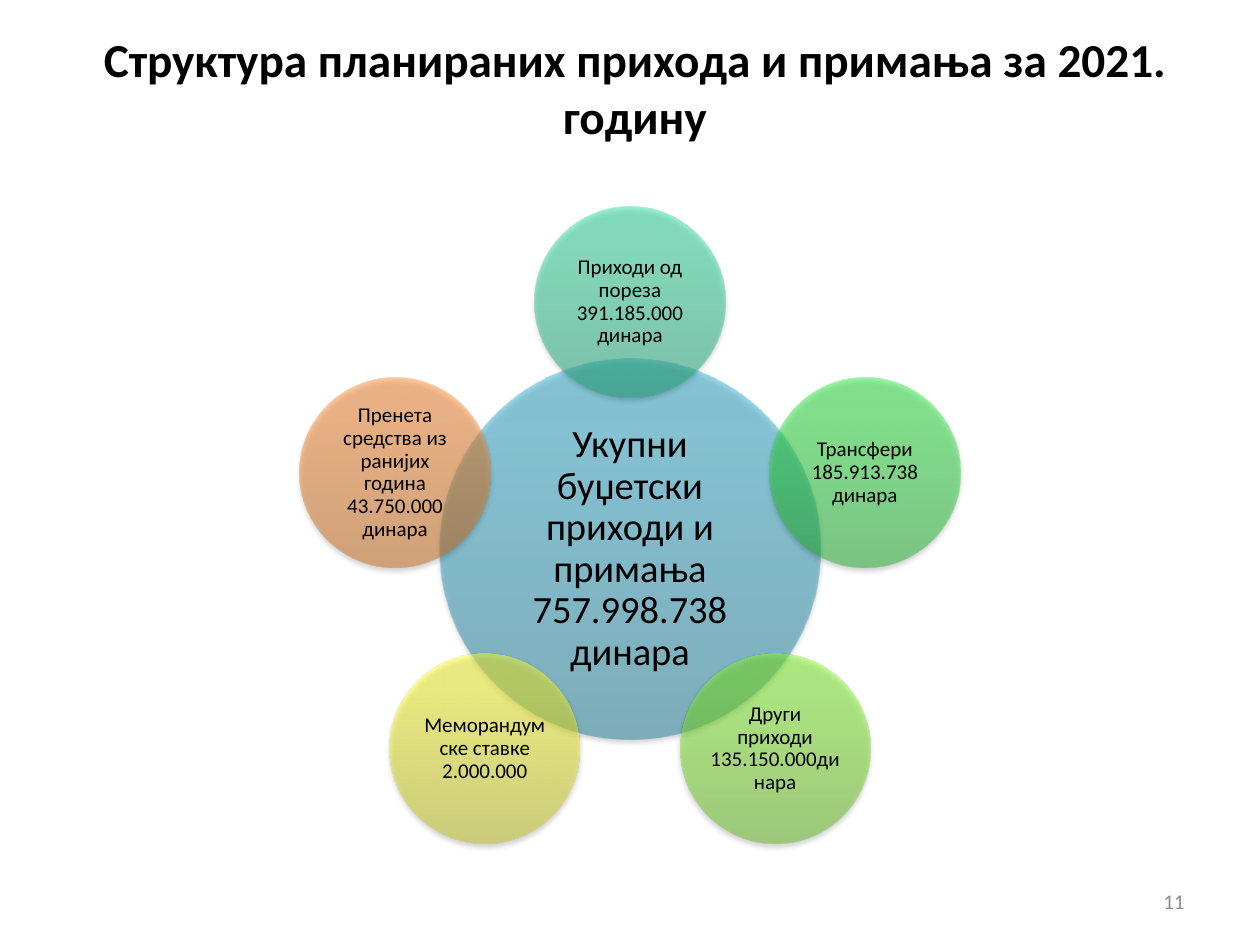
from dataclasses import dataclass
from math import cos, radians, sin

from lxml.etree import SubElement
from pptx import Presentation
from pptx.dml.color import RGBColor
from pptx.enum.shapes import MSO_SHAPE
from pptx.enum.text import MSO_ANCHOR, PP_ALIGN
from pptx.oxml.ns import qn
from pptx.util import Inches, Pt


@dataclass(frozen=True)
class Theme:
    font: str = "Calibri"
    ink: str = "000000"
    muted: str = "8C8C8C"
    title_size: int = 27
    total_size: int = 22
    label_size: int = 12
    opacity: int = 50
    shadow_opacity: int = 35
    total_colors: tuple = ("2A88A2", "37B1D2", "34B4D6")


THEME = Theme()
WIDTH, HEIGHT = Inches(10), Inches(7.5)
CENTER = (0.5 * WIDTH, 0.581 * HEIGHT)
TOTAL_DIAMETER = 0.302 * WIDTH
SOURCE_DIAMETER = TOTAL_DIAMETER / 2
ORBIT = 0.196 * WIDTH
INSCRIBED_SHARE = cos(radians(45))

TOTAL = "Укупни буџетски приходи и примања 757.998.738 динара"
SOURCES = [
    ("Приходи од пореза 391.185.000 динара", ("27AB7E", "32DFA4", "2FE3A6")),
    ("Трансфери 185.913.738\vдинара", ("24B534", "2FEB43", "2CEF41")),
    ("Други приходи 135.150.000динара", ("67BD22", "86F62D", "86FB29")),
    ("Меморандумске ставке 2.000.000", ("C4C521", "FEFF2C", "FEFF2D")),
    ("Пренета средства из ранијих година 43.750.000 динара",
     ("CC6E20", "FF9034", "FF9136")),
]


def set_attributes(target, values):
    for name, value in values.items():
        setattr(target, name, value)


def centered_box(center, size):
    return [int(center[0] - size / 2), int(center[1] - size / 2),
            int(size), int(size)]


def add_color(parent, color, opacity):
    element = SubElement(parent, qn("a:srgbClr"), val=color)
    SubElement(element, qn("a:alpha"), val=str(opacity * 1000))


def add_text(slide, box, text, size, color=THEME.ink, bold=False,
             alignment=PP_ALIGN.CENTER, spacing=None, inset=None):
    shape = slide.shapes.add_textbox(*box)
    frame = shape.text_frame
    set_attributes(frame, {"word_wrap": True,
                           "vertical_anchor": MSO_ANCHOR.MIDDLE})
    if inset is not None:
        sides = ("left", "right", "top", "bottom")
        set_attributes(frame, {f"margin_{side}": inset for side in sides})
    paragraph = frame.paragraphs[0]
    paragraph.text = text
    set_attributes(paragraph, {"alignment": alignment,
                               "line_spacing": spacing})
    for run in paragraph.runs:
        set_attributes(run.font, {"name": THEME.font, "size": Pt(size),
                                  "bold": bold})
        run.font.color.rgb = RGBColor.from_string(color)


def add_circle(slide, center, diameter, colors):
    shape = slide.shapes.add_shape(
        MSO_SHAPE.OVAL, *centered_box(center, diameter))
    shape.line.fill.background()
    shape.shadow.inherit = False
    shape.fill.gradient()
    shape.fill.gradient_angle = 90
    properties = shape.element.spPr
    stops = properties.find(".//" + qn("a:gsLst"))
    for stop in list(stops):
        stops.remove(stop)
    for position, color in zip((0, 80, 100), colors):
        stop = SubElement(stops, qn("a:gs"), pos=str(position * 1000))
        add_color(stop, color, THEME.opacity)
    shadow = SubElement(
        properties.find(qn("a:effectLst")), qn("a:outerShdw"),
        blurRad=str(Pt(3.1)), dist=str(Pt(1.8)), dir="5400000",
        rotWithShape="0")
    add_color(shadow, THEME.ink, THEME.shadow_opacity)


def add_bubble(slide, center, diameter, colors, text, size, inset):
    add_circle(slide, center, diameter, colors)
    add_text(slide, centered_box(center, diameter * INSCRIBED_SHARE),
             text, size, spacing=0.9, inset=inset)


def add_sources(slide):
    for index, (text, colors) in enumerate(SOURCES):
        angle = radians(index * 360 / len(SOURCES))
        center = (CENTER[0] + ORBIT * sin(angle),
                  CENTER[1] - ORBIT * cos(angle))
        add_bubble(slide, center, SOURCE_DIAMETER, colors, text,
                   THEME.label_size, Inches(0.02))


def main():
    presentation = Presentation()
    set_attributes(presentation, {"slide_width": WIDTH,
                                  "slide_height": HEIGHT})
    slide = presentation.slides.add_slide(presentation.slide_layouts[6])
    title_box = [int(0.054 * WIDTH), int(0.036 * HEIGHT),
                 int(0.9 * WIDTH), int(0.113 * HEIGHT)]
    number_box = [int(0.717 * WIDTH), int(0.927 * HEIGHT),
                  int(0.233 * WIDTH), int(0.053 * HEIGHT)]
    add_text(slide, title_box,
             "Структура планираних прихода и примања за 2021. годину",
             THEME.title_size, bold=True)
    add_text(slide, number_box, "11", THEME.label_size, THEME.muted,
             alignment=PP_ALIGN.RIGHT)
    add_bubble(slide, CENTER, TOTAL_DIAMETER, THEME.total_colors, TOTAL,
               THEME.total_size, Inches(0.03))
    add_sources(slide)
    presentation.save("out.pptx")


if __name__ == "__main__":
    main()
